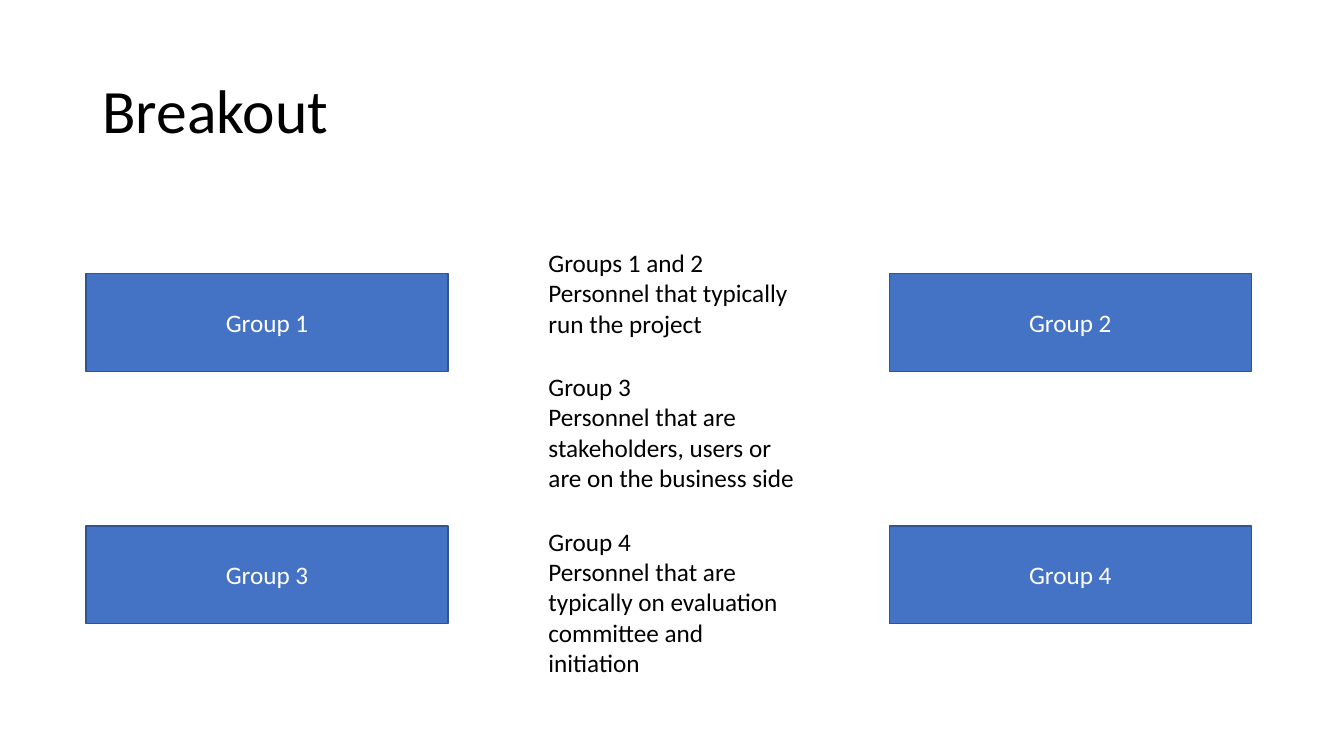
from pptx import Presentation
from pptx.util import Pt
from pptx.dml.color import RGBColor
from pptx.enum.shapes import MSO_SHAPE
from pptx.enum.text import MSO_ANCHOR, MSO_AUTO_SIZE, PP_ALIGN

BLUE = RGBColor(0x44, 0x72, 0xC4)
OUTLINE = RGBColor(0x32, 0x54, 0x91)
WHITE = RGBColor(0xFF, 0xFF, 0xFF)
BLACK = RGBColor(0x00, 0x00, 0x00)


def add_run(p, text, size, color):
    r = p.add_run()
    r.text = text
    r.font.name = "Calibri"
    r.font.size = Pt(size)
    r.font.color.rgb = color


prs = Presentation()
prs.slide_width, prs.slide_height = Pt(960), Pt(540)
s = prs.slides.add_slide(prs.slide_layouts[5])

title = s.shapes.title
title.left, title.top, title.width, title.height = Pt(66), Pt(28.75), Pt(828), Pt(104.4)
tf = title.text_frame
tf.word_wrap = True
tf.auto_size = MSO_AUTO_SIZE.NONE
tf.vertical_anchor = MSO_ANCHOR.MIDDLE
p = tf.paragraphs[0]
p.alignment = PP_ALIGN.LEFT
p.line_spacing = 0.9
add_run(p, "Breakout", 44, BLACK)

for i in range(4):
    row, col = divmod(i, 2)
    sp = s.shapes.add_shape(MSO_SHAPE.RECTANGLE, Pt(61.4 + 573.8 * col),
                            Pt(195.2 + 180.4 * row), Pt(258.7), Pt(70))
    sp.shadow.inherit = False
    sp.fill.solid()
    sp.fill.fore_color.rgb = BLUE
    sp.line.color.rgb = OUTLINE
    sp.line.width = Pt(1)
    tf = sp.text_frame
    tf.vertical_anchor = MSO_ANCHOR.MIDDLE
    p = tf.paragraphs[0]
    p.alignment = PP_ALIGN.CENTER
    add_run(p, f"Group {i + 1}", 18, WHITE)

members = [
    (173.2, 72.7, "Groups 1 and 2", "Personnel that typically run the project"),
    (261.8, 94.5, "Group 3", "Personnel that are stakeholders, users or are on the business side"),
    (372.4, 116.3, "Group 4", "Personnel that are typically on evaluation committee and initiation"),
]
for top, height, group, people in members:
    sp = s.shapes.add_textbox(Pt(384.7), Pt(top), Pt(192.2), Pt(height))
    tf = sp.text_frame
    tf.word_wrap = True
    tf.auto_size = MSO_AUTO_SIZE.SHAPE_TO_FIT_TEXT
    add_run(tf.paragraphs[0], group, 18, BLACK)
    add_run(tf.add_paragraph(), people, 18, BLACK)

prs.save("out.pptx")
